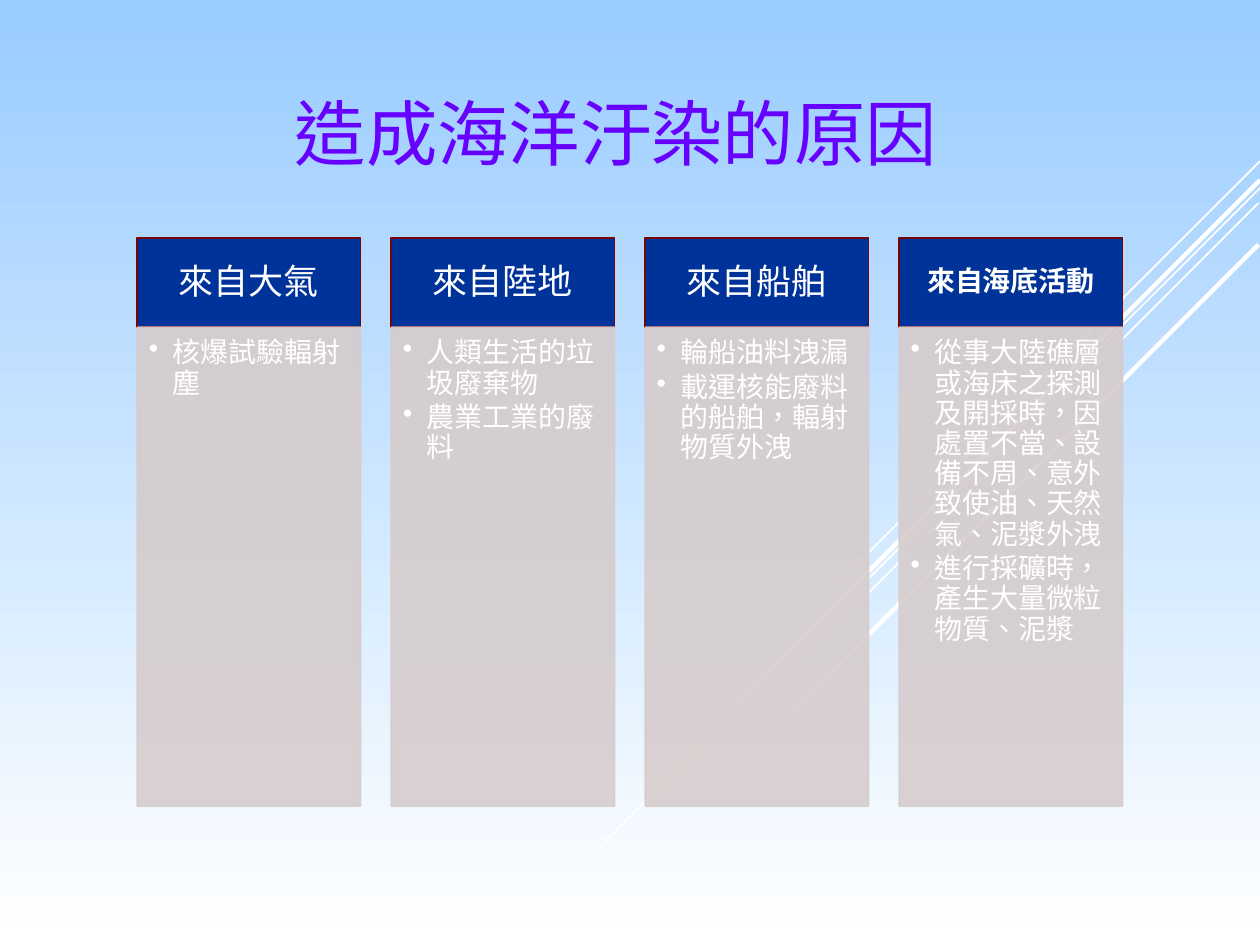
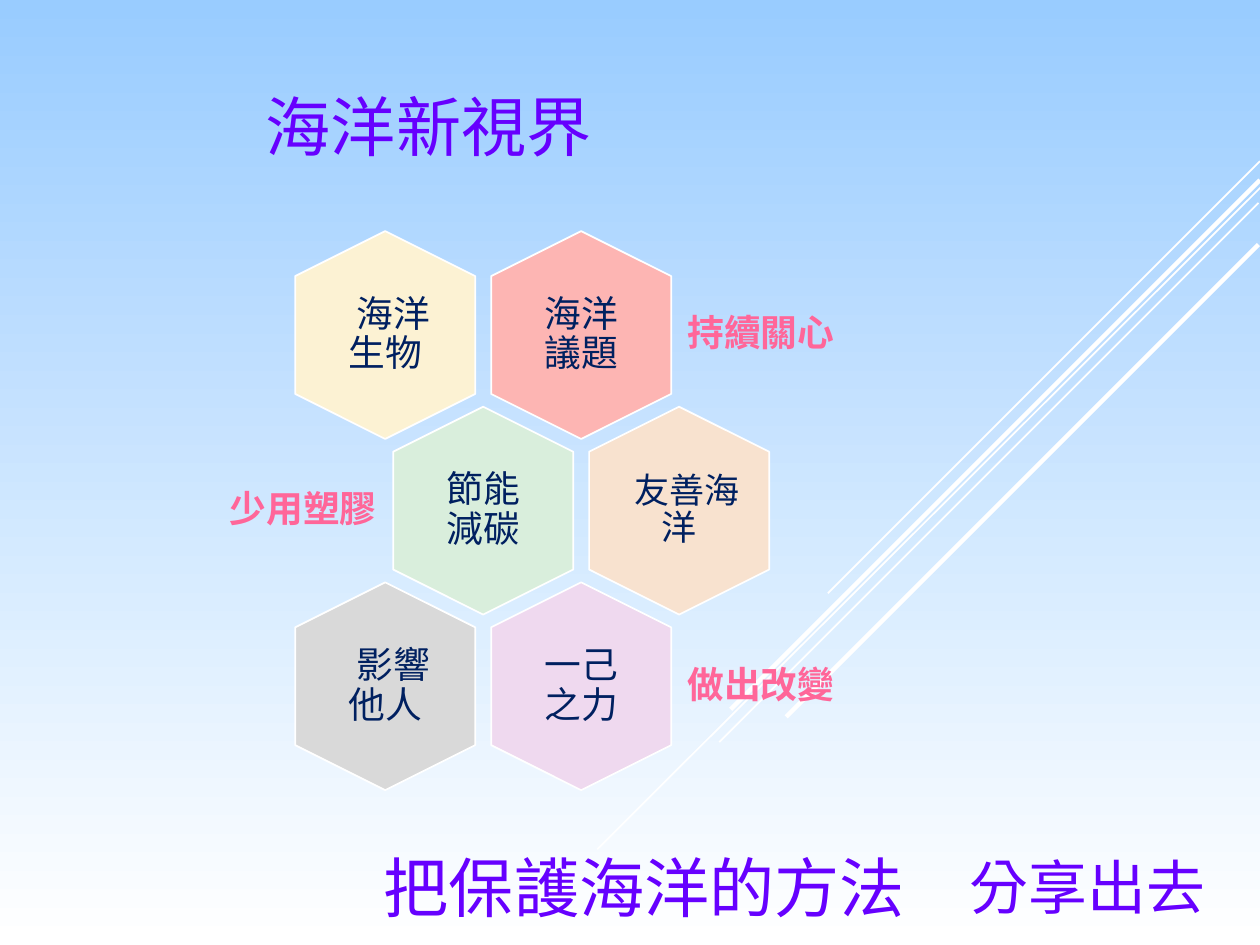
from lxml import etree
from pptx import Presentation
from pptx.dml.color import RGBColor
from pptx.enum.shapes import MSO_CONNECTOR as Connector, MSO_SHAPE as Preset
from pptx.enum.text import MSO_ANCHOR as Anchor, MSO_AUTO_SIZE as AutoSize, PP_ALIGN as Align
from pptx.oxml.ns import qn
from pptx.util import Cm, Pt

TITLE_FONT, TEXT_FONT = "Noto Sans CJK SC", "League Spartan"
VIOLET, WHITE, NAVY, PINK = "6600FF", "FFFFFF", "002060", "FF6699"
HEAD_BLUE, HEAD_EDGE, PANEL_GREY = "003399", "760603", "D6CCCC"
SKY = "99CCFF"

# x1, y1, x2, y2 in cm, then width in points
RAYS = [
    (25.4, 3.25, 16.69, 11.96, 1),
    (25.43, 3.76, 12.04, 17.12, 1),
    (25.37, 4.09, 14.5, 14.96, 1),
    (25.4, 3.63, 14.73, 14.3, 2.5),
    (25.37, 4.93, 15.85, 14.45, 2.5),
]

CAUSES = [
    ("來自大氣", 20, False, ["核爆試驗輻射塵"]),
    ("來自陸地", 20, False, ["人類生活的垃圾廢棄物", "農業工業的廢料"]),
    ("來自船舶", 20, False, ["輪船油料洩漏", "載運核能廢料的船舶，輻射物質外洩"]),
    ("來自海底活動", 16, True, [
        "從事大陸礁層或海床之探測及開採時，因處置不當、設備不周、意外致使油、天然氣、泥漿外洩",
        "進行採礦時，產生大量微粒物質、泥漿",
    ]),
]

# row, column, text, fill, text size, first-line indent, side inset
CELLS = [
    (0, 0, "海洋生物", "FCF2D3", 21, 0.34, 0.23),
    (0, 1, "海洋議題", "FDB5B3", 21, 0, 0.23),
    (1, 0, "節能減碳", "D9EEDC", 21, 0, 0.23),
    (1, 1, "友善海洋", "F8E2CF", 20, 0.33, 0),
    (2, 0, "影響他人", "D9D9D9", 21, 0.34, 0.23),
    (2, 1, "一己之力", "EFD9EF", 21, 0, 0.23),
]

# row, column of the neighbouring cell, side (1 right, -1 left), text
LABELS = [(0, 1, 1, "持續關心"), (1, 0, -1, "少用塑膠"), (2, 1, 1, "做出改變")]


def rgb(code):
    return RGBColor.from_string(code)


def cm_box(*lengths):
    return [Cm(length) for length in lengths]


def write(para, text, size, color, font=TEXT_FONT, bold=False):
    span = para.add_run()
    span.text = text
    span.font.size, span.font.bold = Pt(size), bold
    span.font.color.rgb = rgb(color)
    span.font.name = font
    props = span._r.get_or_add_rPr()
    props.set("lang", "zh-TW")
    etree.SubElement(props, qn("a:ea"), typeface=font)


def set_frame(shape, insets, anchor=Anchor.MIDDLE):
    """Wrap the text and set left, top, right and bottom insets in cm."""
    frame = shape.text_frame
    frame.word_wrap, frame.auto_size = True, AutoSize.NONE
    frame.vertical_anchor = anchor
    (frame.margin_left, frame.margin_top,
     frame.margin_right, frame.margin_bottom) = cm_box(*insets)
    return frame


def add_block(page, preset, box, fill, edge):
    shape = page.shapes.add_shape(preset, *cm_box(*box))
    shape.shadow.inherit = False
    shape.fill.solid()
    shape.fill.fore_color.rgb = rgb(fill)
    shape.line.color.rgb = rgb(edge)
    shape.line.width = Pt(1)
    return shape


def style_master(deck, page):
    """Give the master its sky gradient and the white rays, drawn through page."""
    master = deck.slide_master
    fill = master.background.fill
    fill.gradient()
    fill.gradient_angle = 270
    for stop, color, position in zip(fill.gradient_stops, (SKY, WHITE), (0, 1)):
        stop.color.rgb, stop.position = rgb(color), position
    for number, (*ends, width) in enumerate(RAYS):
        ray = page.shapes.add_connector(Connector.STRAIGHT, *cm_box(*ends))
        ray.line.color.rgb = rgb(WHITE)
        ray.line.width = Pt(width)
        etree.SubElement(ray.element.spPr, qn("a:effectLst"))
        ray.element[0][0].set("id", str(50 + number))
        master.shapes.element.insert(2 + number, ray.element)


def write_heading(shape, text, size):
    para = set_frame(shape, (0.25, 0.13, 0.25, 0.13)).paragraphs[0]
    para.alignment = Align.LEFT
    write(para, text, size, VIOLET, TITLE_FONT)


def place_title(page, box, text, size):
    title = page.shapes.title
    title.left, title.top, title.width, title.height = cm_box(*box)
    write_heading(title, text, size)


def add_bullet(para, text):
    para.line_spacing, para.space_after = 0.9, Pt(2.4)
    props = para._p.get_or_add_pPr()
    props.set("marL", str(Cm(0.48)))
    props.set("indent", str(-Cm(0.48)))
    etree.SubElement(props, qn("a:buChar"), char="•")
    para.alignment = Align.LEFT
    write(para, text, 16, WHITE)


def add_cause(page, box, head_height, cause):
    left, top, width, height = box
    name, size, bold, points = cause
    head = add_block(page, Preset.RECTANGLE, (left, top, width, head_height),
                     HEAD_BLUE, HEAD_EDGE)
    para = set_frame(head, (0.3, 0.2, 0.3, 0.2)).paragraphs[0]
    para.alignment, para.line_spacing = Align.CENTER, 0.9
    write(para, name, size, WHITE, bold=bold)

    panel = add_block(page, Preset.RECTANGLE,
                      (left, top + head_height, width, height - head_height),
                      PANEL_GREY, PANEL_GREY)
    for color in panel.element.spPr.iter(qn("a:srgbClr")):
        etree.SubElement(color, qn("a:alpha"), val="90000")
    frame = set_frame(panel, (0.23, 0.23, 0.3, 0.36), Anchor.TOP)
    for number, point in enumerate(points):
        add_bullet(frame.add_paragraph() if number else frame.paragraphs[0], point)


def add_causes(page, box):
    left, top, width, height = box
    column = 4.5
    pitch = (width - column) / (len(CAUSES) - 1)
    for number, cause in enumerate(CAUSES):
        add_cause(page, (left + number * pitch, top, column, height), 1.8, cause)


def add_caption(page, box, text, size, color, align, inset, indent=0, bold=False):
    caption = page.shapes.add_textbox(*cm_box(*box))
    para = set_frame(caption, (inset, 0.23, inset, 0.23)).paragraphs[0]
    para.alignment, para.line_spacing = align, 0.9
    if indent:
        para._p.get_or_add_pPr().set("indent", str(Cm(indent)))
    write(para, text, size, color, bold=bold)


def add_honeycomb(page, left, top):
    """Lay out upright hexagons, odd rows shifted by half a cell, with side labels."""
    across, upright = 3.63, 4.19
    pitch_x, pitch_y = 3.95, 3.54

    def centre(row, column):
        return (left + across / 2 + (column + row % 2 / 2) * pitch_x,
                top + upright / 2 + row * pitch_y)

    for row, column, text, fill, size, indent, inset in CELLS:
        x, y = centre(row, column)
        cell = add_block(page, Preset.HEXAGON,
                         (x - upright / 2, y - across / 2, upright, across), fill, WHITE)
        cell.rotation = 90
        add_caption(page, (x - 1.26, y - 1.44, 2.52, 2.88), text, size, NAVY,
                    Align.CENTER, inset, indent)

    label_width, label_height, gap = 4.6, 2.5, 0.1
    for row, column, side, text in LABELS:
        x, y = centre(row, column)
        edge = x + side * (across / 2 + gap)
        start, align = (edge, Align.LEFT) if side > 0 else (edge - label_width, Align.RIGHT)
        add_caption(page, (start, y - label_height / 2, label_width, label_height),
                    text, 21, PINK, align, 0.23, bold=True)


def build_causes_page(page):
    place_title(page, (5.69, 1.32, 14.4, 2.69), "造成海洋汙染的原因", 40.8)
    add_causes(page, (2.77, 4.8, 19.86, 11.45))


def build_vision_page(page):
    place_title(page, (5.11, 1.52, 7.24, 2.01), "海洋新視界", 37.2)
    add_honeycomb(page, 5.95, 4.66)
    for box, text, size in [
        ((7.49, 16.92, 11.81, 1.9), "把保護海洋的方法", 37.2),
        ((19.3, 17.12, 5.69, 1.5), "分享出去", 33.6),
    ]:
        write_heading(page.shapes.add_textbox(*cm_box(*box)), text, size)


def main():
    deck = Presentation()
    deck.slide_width, deck.slide_height = Cm(25.4), Cm(19.05)
    title_only = deck.slide_layouts[5]
    pages = [deck.slides.add_slide(title_only) for _ in range(2)]
    style_master(deck, pages[0])
    build_causes_page(pages[0])
    build_vision_page(pages[1])
    deck.save("out.pptx")


if __name__ == "__main__":
    main()
